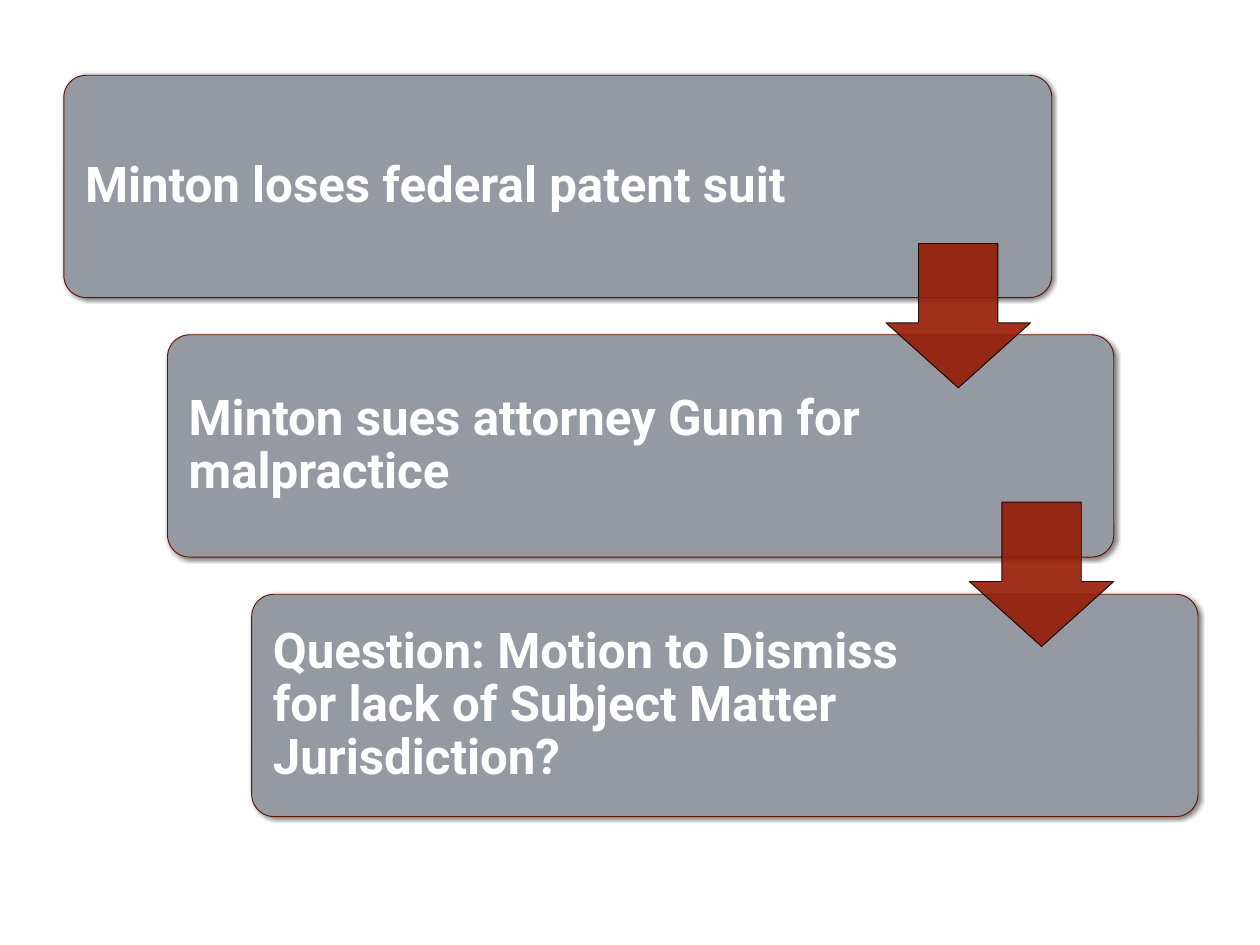
from lxml import etree
from pptx import Presentation
from pptx.dml.color import RGBColor
from pptx.enum.shapes import MSO_SHAPE
from pptx.enum.text import MSO_ANCHOR
from pptx.oxml.ns import qn
from pptx.util import Inches, Pt

ROUNDED, DOWN_ARROW = MSO_SHAPE.ROUNDED_RECTANGLE, MSO_SHAPE.DOWN_ARROW
MIDDLE = MSO_ANCHOR.MIDDLE

COLORS = {"card": "959AA2", "card_line": "641303", "arrow": "961C05",
          "black": "000000", "text": "FFFFFF"}
TEXT_FORMAT = {"size": Pt(40), "name": "Roboto", "bold": True}

TOP, STEP_HEIGHT, STEP_PITCH, PAD = 0.85, 2.51, 2.93, 0.07
ARROW_SIZE, ARROW_TOP, ARROW_PITCH = 1.63, 2.75, 2.92

# Text, left, card width, text width
STEPS = [
    ("Minton loses federal patent suit", 0.72, 11.15, 8.33),
    ("Minton sues attorney Gunn for malpractice", 1.89, 10.68, 7.96),
    ("Question: Motion to Dismiss for lack of Subject Matter Jurisdiction?",
     2.84, 10.68, 7.96),
]
ARROW_LEFTS = [10, 10.94]


def rgb(name):
    return RGBColor.from_string(COLORS[name])


def add_alpha(color, percent):
    etree.SubElement(color, qn("a:alpha"), val=str(percent * 1000))


def add_outlined(s, kind, box, adjustments, fill, line):
    sp = s.shapes.add_shape(kind, *map(Inches, box))
    for i, value in enumerate(adjustments):
        sp.adjustments[i] = value
    sp.shadow.inherit = False
    sp.fill.solid()
    sp.fill.fore_color.rgb = rgb(fill)
    sp.line.color.rgb = rgb(line)
    sp.line.width = Pt(0.75)
    return sp


def add_soft_shadow(sp):
    effects = sp._element.spPr.find(qn("a:effectLst"))
    shadow = etree.SubElement(effects, qn("a:outerShdw"), blurRad=str(Pt(4)),
                              dist=str(Pt(1)), dir="2700000", rotWithShape="0")
    color = etree.SubElement(shadow, qn("a:srgbClr"), val=COLORS["black"])
    add_alpha(color, 50)


def add_step(s, box, text, text_width):
    left, top, width, height = box
    # Card
    card = add_outlined(s, ROUNDED, box, [0.1], "card", "card_line")
    add_soft_shadow(card)
    # Text
    tb = s.shapes.add_textbox(Inches(left + PAD), Inches(top + PAD),
                              Inches(text_width), Inches(height - 2 * PAD))
    tf = tb.text_frame
    tf.word_wrap = True
    tf.vertical_anchor = MIDDLE
    for side in ("left", "top", "right", "bottom"):
        setattr(tf, f"margin_{side}", Inches(0.17))
    p = tf.paragraphs[0]
    p.line_spacing = 0.9
    r = p.add_run()
    r.text = text
    for name, value in TEXT_FORMAT.items():
        setattr(r.font, name, value)
    r.font.color.rgb = rgb("text")


def add_arrow(s, box):
    sp = add_outlined(s, DOWN_ARROW, box, [0.55, 0.45], "arrow", "black")
    # Slight transparency of fill and line
    for color in sp._element.spPr.iter(qn("a:srgbClr")):
        add_alpha(color, 90)


def main():
    prs = Presentation()
    prs.slide_width, prs.slide_height = Inches(14.22), Inches(10.67)
    s = prs.slides.add_slide(prs.slide_layouts[6])
    for i, (text, left, width, text_width) in enumerate(STEPS):
        box = (left, TOP + i * STEP_PITCH, width, STEP_HEIGHT)
        add_step(s, box, text, text_width)
    for i, left in enumerate(ARROW_LEFTS):
        add_arrow(s, (left, ARROW_TOP + i * ARROW_PITCH, ARROW_SIZE, ARROW_SIZE))
    prs.save("out.pptx")


if __name__ == "__main__":
    main()
